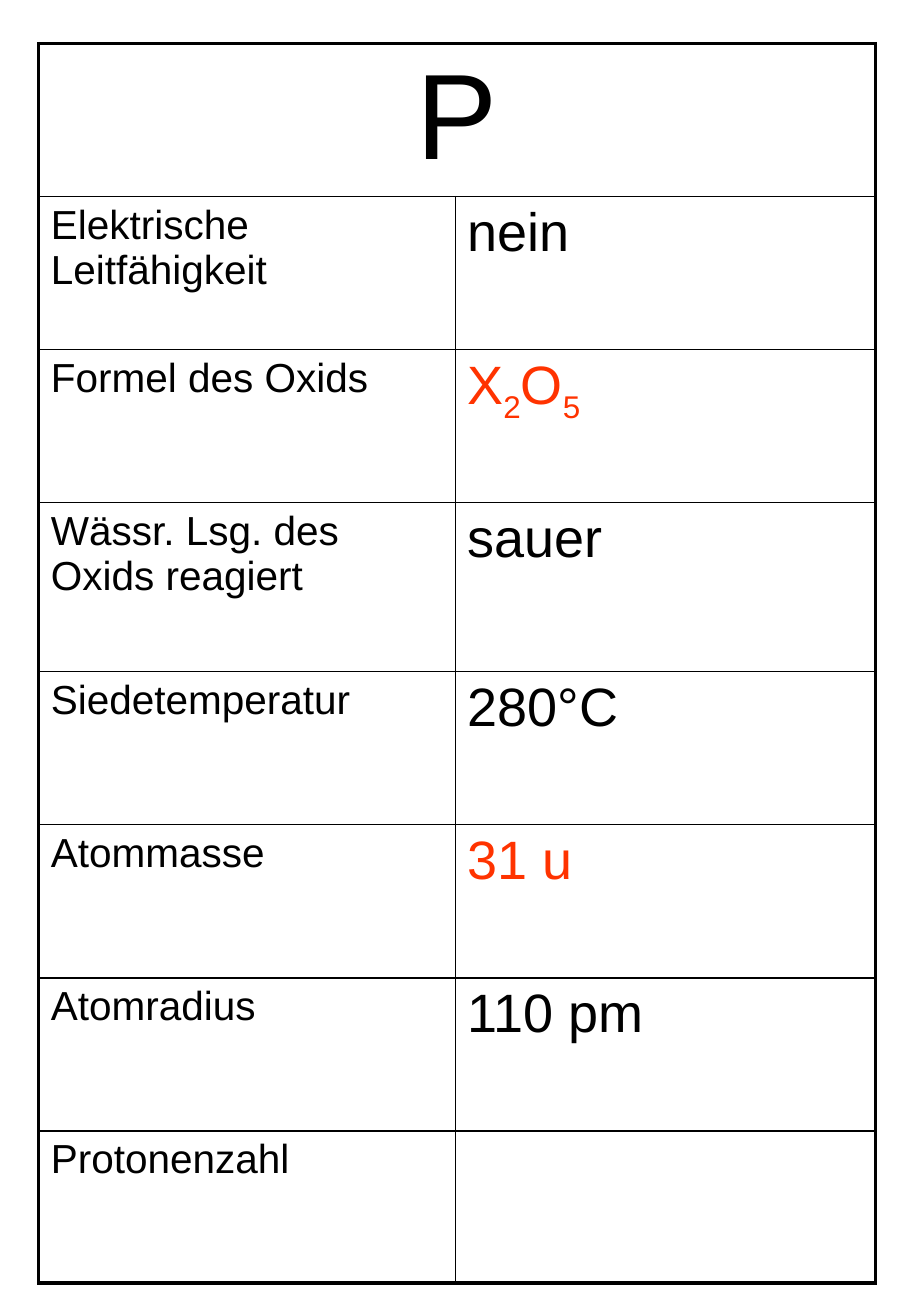
from lxml import etree
from pptx import Presentation
from pptx.dml.color import RGBColor
from pptx.enum.text import PP_ALIGN
from pptx.oxml.ns import qn
from pptx.util import Cm, Pt

CENTER = PP_ALIGN.CENTER
LEFT = PP_ALIGN.LEFT
COLORS = {"ink": "000000", "accent": "FF3300"}
THIN, THICK = Pt(1), Pt(2.25)

PROPERTIES = [
    ("Elektrische Leitfähigkeit", ["nein"], "ink"),
    ("Formel des Oxids", ["X", "2", "O", "5"], "accent"),
    ("Wässr. Lsg. des Oxids reagiert", ["sauer"], "ink"),
    ("Siedetemperatur", ["280°C"], "ink"),
    ("Atommasse", ["31 u"], "accent"),
    ("Atomradius", ["110 pm"], "ink"),
    ("Protonenzahl", [], "ink"),
]
COLUMN_WIDTHS = [8.71, 8.79]
ROW_HEIGHTS = [3.2, 3.2, 3.2, 3.53, 3.2, 3.2, 3.2, 3.18]


def write(cell, parts, size, color, align=LEFT):
    paragraph = cell.text_frame.paragraphs[0]
    paragraph.alignment = align
    for position, part in enumerate(parts):
        run = paragraph.add_run()
        run.text = part
        run.font.name = "Arial"
        run.font.size = Pt(size)
        run.font.color.rgb = RGBColor.from_string(COLORS[color])
        if position % 2:
            run._r.get_or_add_rPr().set("baseline", "-25000")


def add_border(cell, side, width):
    line = etree.SubElement(cell._tc.get_or_add_tcPr(), qn(f"a:ln{side}"), w=str(width))
    fill = etree.SubElement(line, qn("a:solidFill"))
    etree.SubElement(fill, qn("a:srgbClr"), val=COLORS["ink"])


prs = Presentation()
prs.slide_width, prs.slide_height = Cm(19.05), Cm(27.51)
slide = prs.slides.add_slide(prs.slide_layouts[6])

last_row, last_column = len(ROW_HEIGHTS) - 1, len(COLUMN_WIDTHS) - 1
element_card = slide.shapes.add_table(
    len(ROW_HEIGHTS), len(COLUMN_WIDTHS), Cm(0.81), Cm(0.91),
    Cm(sum(COLUMN_WIDTHS)), Cm(sum(ROW_HEIGHTS))).table
element_card.first_row = False
element_card.horz_banding = False
for column, width in zip(element_card.columns, COLUMN_WIDTHS):
    column.width = Cm(width)
for row, height in zip(element_card.rows, ROW_HEIGHTS):
    row.height = Cm(height)

symbol = element_card.cell(0, 0)
symbol.merge(element_card.cell(0, last_column))
write(symbol, ["P"], 72, "ink", CENTER)

for r, (label, value, color) in enumerate(PROPERTIES, start=1):
    write(element_card.cell(r, 0), [label], 24, "ink")
    write(element_card.cell(r, 1), value, 32, color)

for r in range(last_row + 1):
    for c in range(last_column + 1):
        cell = element_card.cell(r, c)
        outer_edges = {
            "L": c == 0,
            "R": c == last_column or cell.is_merge_origin,
            "T": r == 0,
            "B": r == last_row,
        }
        for side, is_outer in outer_edges.items():
            add_border(cell, side, THICK if is_outer else THIN)
        cell.fill.background()

prs.save("out.pptx")
